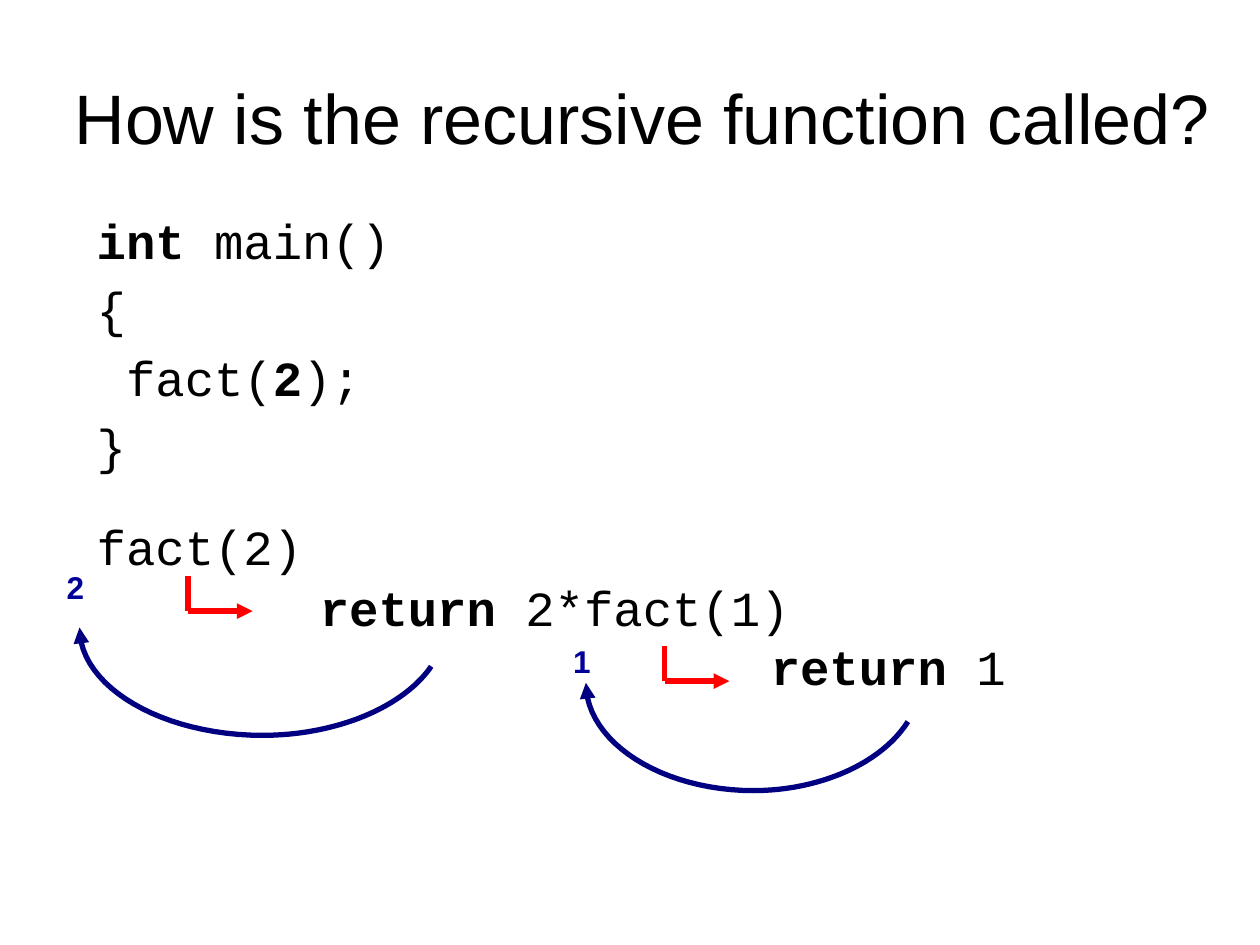
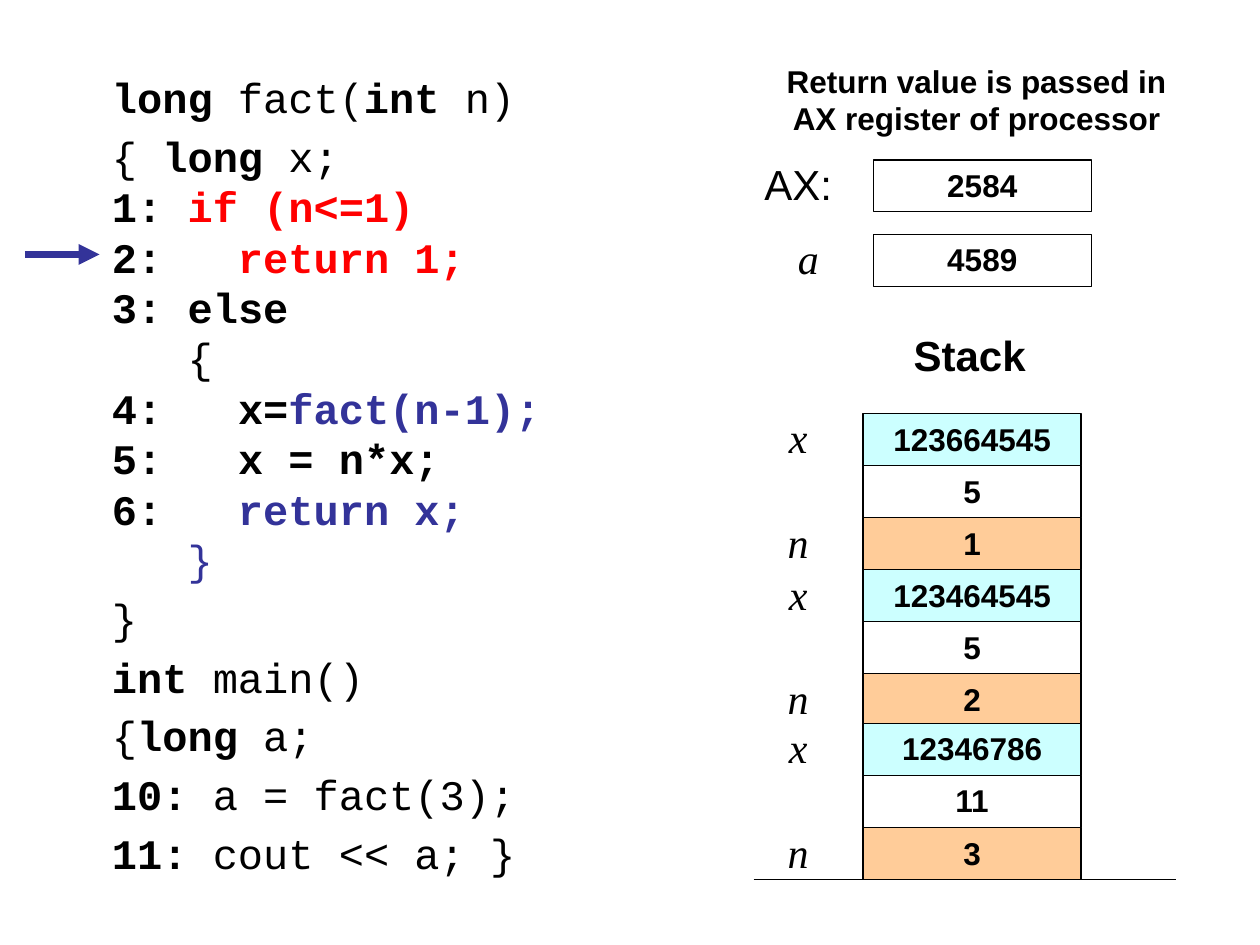
from dataclasses import dataclass

from lxml.etree import SubElement
from pptx import Presentation
from pptx.dml.color import RGBColor
from pptx.enum.shapes import MSO_CONNECTOR as Connector, MSO_SHAPE as Preset
from pptx.enum.text import MSO_ANCHOR as Anchor, PP_ALIGN as Align
from pptx.oxml.ns import qn
from pptx.util import Pt


@dataclass(frozen=True)
class Theme:
    black: str = "000000"
    red: str = "FF0000"
    navy: str = "000080"
    label_blue: str = "000099"
    code_blue: str = "333399"
    local_fill: str = "CCFFFF"
    argument_fill: str = "FFCC99"
    sans: str = "Arial"
    mono: str = "Courier New"
    serif: str = "Times New Roman"
    title_size: int = 40
    large_code_size: int = 28
    body_size: int = 24
    value_size: int = 18
    line_height: float = 1.2
    thin: float = 0.75
    thick: float = 3
    pointer: float = 4


THEME = Theme()
BOLD = {"bold": True}
BOLD_RED = {"bold": True, "color": THEME.red}
BLUE = {"color": THEME.code_blue}
BOLD_BLUE = {"bold": True, "color": THEME.code_blue}

MAIN_CODE = [
    [("int", BOLD), " main()"],
    ["{"],
    [" fact(", ("2", BOLD), ");"],
    ["}"],
]
FACT_HEAD = [
    [("long", BOLD), " fact(", ("int", BOLD), " n)"],
    ["{ ", ("long", BOLD), " x;"],
]
FACT_BODY = [
    [("1: ", BOLD), ("if (n<=1)", BOLD_RED)],
    [("2:  ", BOLD), (" return 1;", BOLD_RED)],
    [("3: else", BOLD)],
    ["   {"],
    [("4:   x=", BOLD), ("fact(n-1);", BOLD_BLUE)],
    [("5:   x = n*x;", BOLD)],
    [("6:", BOLD), ("   return x;", BOLD_BLUE)],
    [("   }", BLUE)],
]
FACT_TAIL = [
    ["}"],
    [("int", BOLD), " main()"],
    ["{", ("long", BOLD), " a;"],
    [("10:", BOLD), " a = fact(3);"],
    [("11:", BOLD), " cout << a; }"],
]


def add_run(paragraph, text, size=THEME.body_size, font=THEME.sans,
            color=THEME.black, bold=False, italic=False):
    run = paragraph.add_run()
    run.text = text
    run.font.size = Pt(size)
    run.font.name = font
    run.font.color.rgb = RGBColor.from_string(color)
    run.font.bold = bold
    run.font.italic = italic


class Deck:
    def __init__(self, theme):
        self.theme = theme
        self.presentation = Presentation()
        self.presentation.slide_width = Pt(720)
        self.presentation.slide_height = Pt(540)
        self.slide = None

    def new_slide(self):
        self.slide = self.presentation.slides.add_slide(self.presentation.slide_layouts[6])

    def text_box(self, left, top, width, height):
        box = self.slide.shapes.add_textbox(Pt(left), Pt(top), Pt(width), Pt(height))
        box.text_frame.word_wrap = True
        return box.text_frame

    def set_text(self, frame, text, align=Align.CENTER, **style):
        paragraph = frame.paragraphs[0]
        paragraph.alignment = align
        paragraph.line_spacing = Pt(style["size"] * self.theme.line_height)
        add_run(paragraph, text, **style)

    def label(self, text, left, top, width, height=36, align=Align.CENTER,
              anchor=Anchor.TOP, **style):
        frame = self.text_box(left, top, width, height)
        frame.vertical_anchor = anchor
        self.set_text(frame, text, align, **style)

    def code(self, lines, left, top, width, height, size, scale=1, tight=()):
        frame = self.text_box(left, top, width, height)
        for number, line in enumerate(lines):
            paragraph = frame.paragraphs[0] if number == 0 else frame.add_paragraph()
            paragraph.alignment = Align.LEFT
            paragraph.line_spacing = Pt(size * self.theme.line_height * scale)
            paragraph.space_before = Pt(0 if number in tight else 0.2 * size)
            for piece in line:
                text, style = (piece, {}) if isinstance(piece, str) else piece
                add_run(paragraph, text, size=size, font=self.theme.mono, **style)

    def stroke(self, shape, color, width, arrow=False):
        shape.line.color.rgb = RGBColor.from_string(color)
        shape.line.width = Pt(width)
        if arrow:
            outline = shape._element.spPr.find(qn("a:ln"))
            SubElement(outline, qn("a:tailEnd"), type="triangle")

    def line(self, x1, y1, x2, y2, color, width, arrow=False):
        connector = self.slide.shapes.add_connector(
            Connector.STRAIGHT, Pt(x1), Pt(y1), Pt(x2), Pt(y2))
        self.stroke(connector, color, width, arrow)
        SubElement(connector._element.spPr, qn("a:effectLst"))

    def call_arrow(self, left, top):
        corner = top + 20
        self.line(left, top, left, corner, self.theme.red, self.theme.thick)
        self.line(left, corner, left + 37, corner, self.theme.red, self.theme.thick, arrow=True)

    def return_arrow(self, left, top, width, height=61.6):
        controls = [(1, 0.36), (0.92, 0.74), (0.73, 1), (0.52, 1),
                    (0.24, 1), (0, 0.56), (0, 0)]
        steps = 24
        points = []
        for first in (0, 3):
            for step in range(steps + 1):
                t = step / steps
                weights = ((1 - t) ** 3, 3 * t * (1 - t) ** 2, 3 * t * t * (1 - t), t ** 3)
                x, y = (sum(weight * control[axis] for weight, control
                            in zip(weights, controls[first:first + 4])) for axis in (0, 1))
                points.append((Pt(left + x * width), Pt(top + y * height)))
        builder = self.slide.shapes.build_freeform(*points[0])
        builder.add_line_segments(points[1:], close=False)
        curve = builder.convert_to_shape()
        curve.shadow.inherit = False
        curve.fill.background()
        self.stroke(curve, self.theme.navy, self.theme.thick, arrow=True)

    def cell(self, text, left, top, fill=None):
        shape = self.slide.shapes.add_shape(
            Preset.RECTANGLE, Pt(left), Pt(top), Pt(124.6), Pt(29.7))
        shape.shadow.inherit = False
        if fill:
            shape.fill.solid()
            shape.fill.fore_color.rgb = RGBColor.from_string(fill)
        else:
            shape.fill.background()
        self.stroke(shape, self.theme.black, self.theme.thin)
        shape.text_frame.word_wrap = True
        shape.text_frame.vertical_anchor = Anchor.TOP
        self.set_text(shape.text_frame, text, size=self.theme.value_size, bold=True)

    def variable(self, name, left, cell_top):
        self.label(name, left, cell_top - 4.3, 39.6, size=self.theme.body_size,
                   font=self.theme.serif, italic=True)


def build_call_slide(deck):
    theme = deck.theme
    deck.new_slide()
    deck.label("How is the recursive function called?", 31, 21.6, 671.8, 90,
               anchor=Anchor.MIDDLE, size=theme.title_size)
    deck.code(MAIN_CODE, 48.2, 116.6, 182, 155.5, theme.large_code_size)
    calls = [
        (["fact(2)"], 48.2, 295.2, 134),
        ([("return", BOLD), " 2*fact(1)"], 175.7, 329.8, 309),
        ([("return", BOLD), " 1"], 433.4, 363.6, 150.5),
    ]
    for line, left, top, width in calls:
        deck.code([line], left, top, width, 39.6, theme.large_code_size, scale=0.9)
    for left, top in ((107.4, 329.2), (379.8, 369.2)):
        deck.call_arrow(left, top)
    returns = [("1", 334.8, 390.2, 184, 320.4, 363.6), ("2", 45.4, 358.6, 201, 31, 321.1)]
    for value, left, top, width, label_left, label_top in returns:
        deck.return_arrow(left, top, width)
        deck.label(value, label_left, label_top, 22.4, 28.8, align=Align.LEFT,
                   size=theme.value_size, color=theme.label_blue, bold=True)


def build_stack_slide(deck):
    theme = deck.theme
    deck.new_slide()
    body_start = len(FACT_HEAD)
    deck.code(FACT_HEAD + FACT_BODY + FACT_TAIL, 56.9, 37.4, 309, 484.6, theme.body_size,
              tight=range(body_start, body_start + len(FACT_BODY)))
    deck.line(14.2, 145.4, 56.9, 145.4, theme.code_blue, theme.pointer, arrow=True)

    deck.label("Return value is passed in AX register of processor", 430.6, 31.7, 254.9, 50.4,
               size=theme.value_size, bold=True)
    deck.label("AX:", 427.7, 87.1, 56.9, size=theme.body_size)
    deck.cell("2584", 499, 91.4)
    deck.variable("a", 442.1, 133.9)
    deck.cell("4589", 499, 133.9)

    deck.label("Stack", 430.6, 185, 247, size=theme.body_size, bold=True)
    frames = [
        (236.2, "123664545", "5", "1"),
        (325.4, "123464545", "5", "2"),
        (413.3, "12346786", "11", "3"),
    ]
    for top, local, return_line, argument in frames:
        rows = [("x", local, theme.local_fill), (None, return_line, None),
                ("n", argument, theme.argument_fill)]
        for row, (name, value, fill) in enumerate(rows):
            cell_top = top + row * 29.75
            deck.cell(value, 493.2, cell_top, fill)
            if name:
                deck.variable(name, 436.3, cell_top)
    deck.line(430.6, 502.6, 671.8, 502.6, theme.black, theme.thin)


def main():
    deck = Deck(THEME)
    build_call_slide(deck)
    build_stack_slide(deck)
    deck.presentation.save("out.pptx")


if __name__ == "__main__":
    main()
